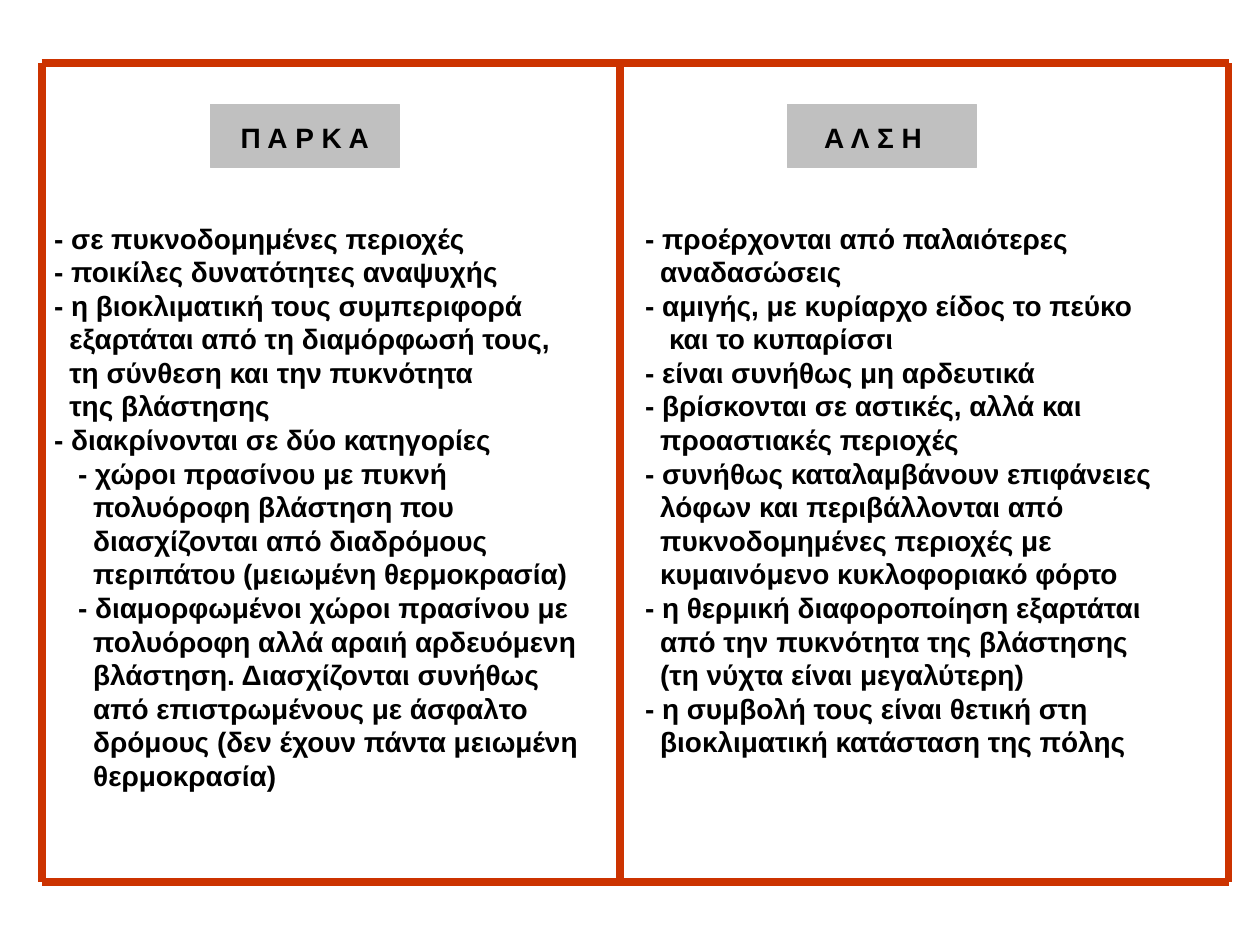
"""Builds a slide comparing parks and groves in a framed two-column layout."""
from lxml.etree import SubElement
from pptx import Presentation
from pptx.dml.color import RGBColor
from pptx.enum.shapes import MSO_CONNECTOR as CONNECTOR, MSO_SHAPE as SHAPE
from pptx.enum.text import MSO_ANCHOR as ANCHOR, MSO_AUTO_SIZE as FIT, PP_ALIGN as ALIGN
from pptx.oxml.ns import qn
from pptx.util import Inches, Pt

COLORS = {"frame": "CC3300", "label": "C0C0C0", "text": "000000"}
FONT = {"name": "Arial", "size": Pt(16), "bold": True}
PARAGRAPH = {"alignment": ALIGN.LEFT, "line_spacing": Pt(19.2), "space_before": Pt(0), "space_after": Pt(0)}
FRAME = {"word_wrap": True, "auto_size": FIT.NONE, "vertical_anchor": ANCHOR.MIDDLE,
         "margin_left": Inches(0.1), "margin_right": Inches(0.1),
         "margin_top": Inches(0.05), "margin_bottom": Inches(0.05)}
PLACE = {"left": Inches(0.33), "top": Inches(0.42), "width": Inches(9.25), "height": Inches(6.4)}
COLUMN = 4.69
HANG, SUB, SUB_HANG = 0.12, 0.19, 0.31

HEADING = [(1.48, "Π Α Ρ Κ Α"), (6.11, "Α Λ Σ Η")]
PARKS = [
    (0, "- σε πυκνοδομημένες περιοχές"),
    (0, "- ποικίλες δυνατότητες αναψυχής"),
    (0, "- η βιοκλιματική τους συμπεριφορά"),
    (HANG, "εξαρτάται από τη διαμόρφωσή τους,"),
    (HANG, "τη σύνθεση και την πυκνότητα"),
    (HANG, "της βλάστησης"),
    (0, "- διακρίνονται σε δύο κατηγορίες"),
    (SUB, "- χώροι πρασίνου με πυκνή"),
    (SUB_HANG, "πολυόροφη βλάστηση που"),
    (SUB_HANG, "διασχίζονται από διαδρόμους"),
    (SUB_HANG, "περιπάτου (μειωμένη θερμοκρασία)"),
    (SUB, "- διαμορφωμένοι χώροι πρασίνου με"),
    (SUB_HANG, "πολυόροφη αλλά αραιή αρδευόμενη"),
    (SUB_HANG, "βλάστηση. Διασχίζονται συνήθως"),
    (SUB_HANG, "από επιστρωμένους με άσφαλτο"),
    (SUB_HANG, "δρόμους (δεν έχουν πάντα μειωμένη"),
    (SUB_HANG, "θερμοκρασία)"),
]
GROVES = [
    (0, "- προέρχονται από παλαιότερες"),
    (HANG, "αναδασώσεις"),
    (0, "- αμιγής, με κυρίαρχο είδος το πεύκο"),
    (SUB, "και το κυπαρίσσι"),
    (0, "- είναι συνήθως μη αρδευτικά"),
    (0, "- βρίσκονται σε αστικές, αλλά και"),
    (HANG, "προαστιακές περιοχές"),
    (0, "- συνήθως καταλαμβάνουν επιφάνειες"),
    (HANG, "λόφων και περιβάλλονται από"),
    (HANG, "πυκνοδομημένες περιοχές με"),
    (HANG, "κυμαινόμενο κυκλοφοριακό φόρτο"),
    (0, "- η θερμική διαφοροποίηση εξαρτάται"),
    (HANG, "από την πυκνότητα της βλάστησης"),
    (HANG, "(τη νύχτα είναι μεγαλύτερη)"),
    (0, "- η συμβολή τους είναι θετική στη"),
    (HANG, "βιοκλιματική κατάσταση της πόλης"),
]

deck = Presentation()
deck.slide_width, deck.slide_height = Inches(10), Inches(7.5)
page = deck.slides.add_slide(deck.slide_layouts[5])

title = page.shapes.title
for name, value in PLACE.items():
    setattr(title, name, value)
for name, value in FRAME.items():
    setattr(title.text_frame, name, value)

for left in (6.25, 1.67):
    label = page.shapes.add_shape(SHAPE.RECTANGLE, Inches(left), Inches(0.83), Inches(1.5), Inches(0.5))
    label.shadow.inherit = False
    label.fill.solid()
    label.fill.fore_color.rgb = RGBColor.from_string(COLORS["label"])
    label.line.color.rgb = RGBColor.from_string(COLORS["label"])
    label.line.width = Pt(0.75)
    title.element.addprevious(label.element)

rows = [HEADING]
for index, park in enumerate(PARKS):
    rows.append([park] + [(COLUMN + indent, text) for indent, text in GROVES[index:index + 1]])

for index, row in enumerate(rows):
    para = title.text_frame.add_paragraph() if index else title.text_frame.paragraphs[0]
    for name, value in PARAGRAPH.items():
        setattr(para, name, value)
    if row is HEADING:
        para.space_after = 2 * PARAGRAPH["line_spacing"]
    tabs = SubElement(para._p.get_or_add_pPr(), qn("a:tabLst"))
    for stop, text in row:
        if stop:
            SubElement(tabs, qn("a:tab"), pos=str(Inches(stop)), algn="l")
    span = para.add_run()
    span.text = "".join(("\t" if stop else "") + text for stop, text in row)
    for name, value in FONT.items():
        setattr(span.font, name, value)
    span.font.color.rgb = RGBColor.from_string(COLORS["text"])

left, middle, right, top, bottom = 0.33, 4.92, 9.75, 0.5, 7
for ends in ((middle, top, middle, bottom), (left, bottom, right, bottom), (left, top, right, top),
             (left, top, left, bottom), (right, top, right, bottom)):
    line = page.shapes.add_connector(CONNECTOR.STRAIGHT, *map(Inches, ends))
    line.line.color.rgb = RGBColor.from_string(COLORS["frame"])
    line.line.width = Pt(4.5)
    SubElement(line.element.spPr, qn("a:effectLst"))

deck.save("out.pptx")
